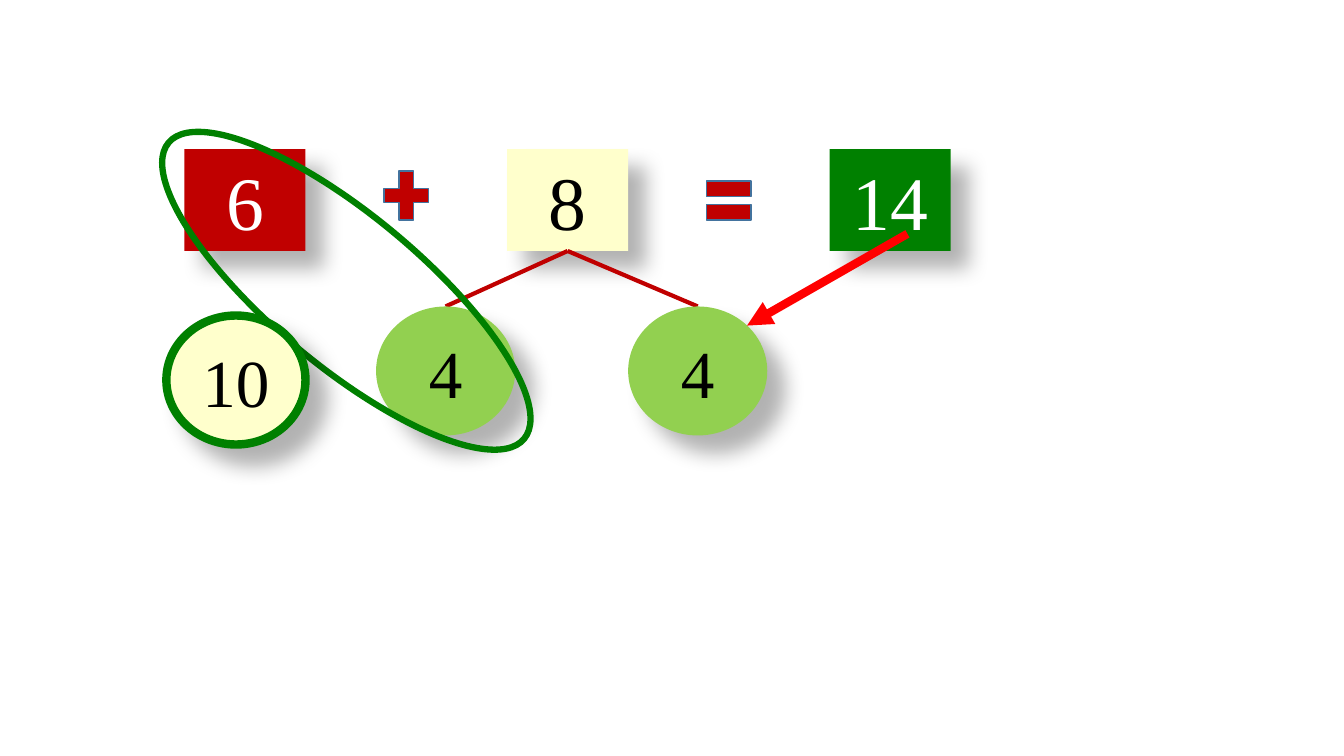
from pptx import Presentation
from pptx.dml.color import RGBColor
from pptx.enum.shapes import MSO_CONNECTOR, MSO_SHAPE
from pptx.enum.text import MSO_ANCHOR, PP_ALIGN
from pptx.oxml.ns import qn
from pptx.util import Inches, Pt
from lxml import etree

RECT, OVAL = MSO_SHAPE.RECTANGLE, MSO_SHAPE.OVAL
PLUS, EQUAL = MSO_SHAPE.MATH_PLUS, MSO_SHAPE.MATH_EQUAL
STRAIGHT = MSO_CONNECTOR.STRAIGHT
BOTTOM, CENTER = MSO_ANCHOR.BOTTOM, PP_ALIGN.CENTER

BLACK = RGBColor(0x00, 0x00, 0x00)
WHITE = RGBColor(0xFF, 0xFF, 0xFF)
DARK_RED = RGBColor(0xC0, 0x00, 0x00)
RED = RGBColor(0xFF, 0x00, 0x00)
CREAM = RGBColor(0xFF, 0xFF, 0xCC)
GREEN = RGBColor(0x00, 0x80, 0x00)
LIME = RGBColor(0x92, 0xD0, 0x50)
BLUE = RGBColor(0x43, 0x73, 0x9E)

TERM_LEFT, TERM_STEP = 1.83, 3.2
OPERATOR_LEFT = 3.73


def add_shape(s, kind, box, fill=None, line=None, width=1):
    """Add a preset shape without a shadow, optionally filled and outlined."""
    sp = s.shapes.add_shape(kind, *(Inches(v) for v in box))
    sp.shadow.inherit = False
    if fill is None:
        sp.fill.background()
    else:
        sp.fill.solid()
        sp.fill.fore_color.rgb = fill
    if line is None:
        sp.line.fill.background()
    else:
        sp.line.color.rgb = line
        sp.line.width = Pt(width)
    return sp


def add_shadow(sp):
    """Give a shape a soft shadow down to the right."""
    effects = sp._element.spPr.find(qn("a:effectLst"))
    shadow = etree.SubElement(effects, qn("a:outerShdw"), blurRad=str(Pt(15)),
                              dist=str(Pt(18)), dir="2700000", algn="tl", rotWithShape="0")
    color = etree.SubElement(shadow, qn("a:srgbClr"), val=str(BLACK))
    etree.SubElement(color, qn("a:alpha"), val="30000")


def add_number(s, kind, box, text, size, color, fill, line=None, width=1):
    """Add a shadowed shape holding a number."""
    sp = add_shape(s, kind, box, fill, line, width)
    add_shadow(sp)
    tf = sp.text_frame
    tf.vertical_anchor = BOTTOM
    p = tf.paragraphs[0]
    p.alignment = CENTER
    r = p.add_run()
    r.text = text
    for name, value in {"name": "Times New Roman", "size": Pt(size)}.items():
        setattr(r.font, name, value)
    r.font.color.rgb = color
    return sp


def add_line(s, start, end, color, width):
    """Add a straight connector without a shadow."""
    line = s.shapes.add_connector(STRAIGHT, *(Inches(v) for v in start + end))
    line.line.color.rgb = color
    line.line.width = Pt(width)
    etree.SubElement(line._element.spPr, qn("a:effectLst"))
    return line


def add_term(s, column, text, color, fill):
    """Add one term of the equation."""
    box = (TERM_LEFT + column * TERM_STEP, 1.48, 1.2, 1.01)
    return add_number(s, RECT, box, text, 54, color, fill)


def add_operator(s, kind, column, top):
    """Add the sign that follows a term."""
    box = (OPERATOR_LEFT + column * TERM_STEP, top, 0.6, 0.66)
    add_shape(s, kind, box, DARK_RED, BLUE)


def add_circle(s, left, top, text, fill, line=None):
    """Add a round part of the number bond."""
    return add_number(s, OVAL, (left, top, 1.38, 1.28), text, 48, BLACK, fill, line, 6)


def main():
    """Build the slide that adds six and eight by making ten."""
    prs = Presentation()
    prs.slide_width, prs.slide_height = Inches(13.33), Inches(7.5)
    s = prs.slides.add_slide(prs.slide_layouts[6])

    add_term(s, 0, "6", WHITE, DARK_RED)
    add_operator(s, PLUS, 0, 1.61)
    eight = add_term(s, 1, "8", BLACK, CREAM)
    add_operator(s, EQUAL, 1, 1.66)
    add_term(s, 2, "14", WHITE, GREEN)

    branches = [add_line(s, (5.63, 2.49), (x, 3.04), DARK_RED, 3) for x in (4.42, 6.92)]
    for branch, left in zip(branches, (3.73, 6.23)):
        four = add_circle(s, left, 3.04, "4", LIME)
        branch.begin_connect(eight, 2)
        branch.end_connect(four, 0)

    loop = add_shape(s, OVAL, (2.69, 0.59, 1.49, 4.59), line=GREEN, width=4.5)
    loop.rotation = 309.8
    add_circle(s, 1.65, 3.13, "10", CREAM, GREEN)

    arrow = add_line(s, (9, 2.32), (7.41, 3.23), RED, 6)
    etree.SubElement(arrow.line._get_or_add_ln(), qn("a:tailEnd"), type="triangle")
    prs.save("out.pptx")


if __name__ == "__main__":
    main()
